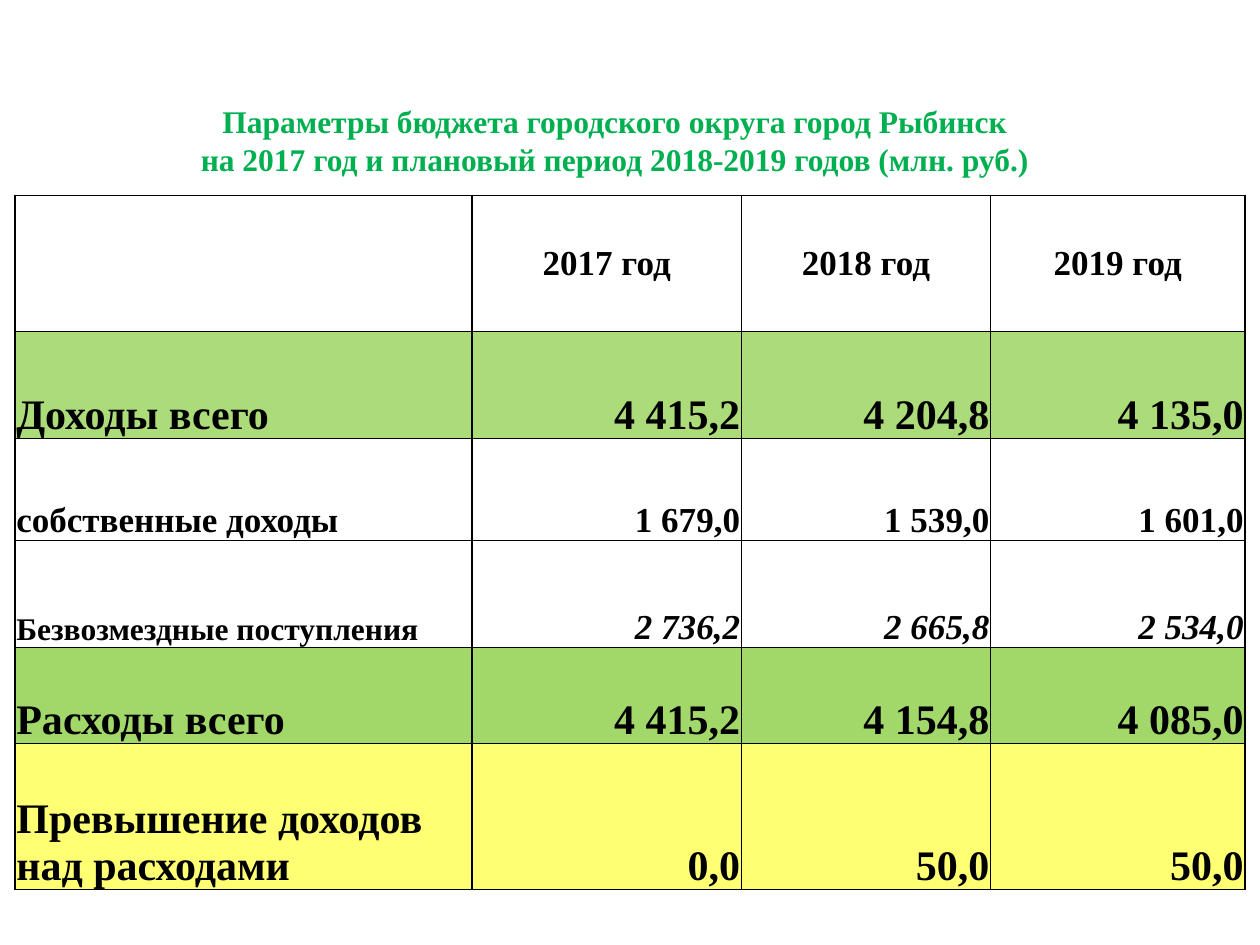
import pptx
import pptx.dml.color
import pptx.enum.text
import pptx.oxml
import pptx.oxml.ns
import pptx.util
from pptx.util import Inches

FONT = "Times New Roman"
ALIGN = pptx.enum.text.PP_ALIGN
ANCHOR = pptx.enum.text.MSO_ANCHOR
COLUMN_WIDTHS = [3.63, 2.14, 1.98, 2.02]
ROW_HEIGHTS = [1.08, 0.85, 0.81, 0.85, 0.76, 1.16]
YEARS = ["", "2017 год", "2018 год", "2019 год"]
# texts, label size, value size, italic values, fill, fill opacity in percent
BUDGET_ROWS = [
    (["Доходы всего", "4 415,2", "4 204,8", "4 135,0"], 24, 24, False, "92D050", 76),
    (["собственные доходы", "1 679,0", "1 539,0", "1 601,0"], 20, 20, False, None, 100),
    (["Безвозмездные поступления", "2 736,2", "2 665,8", "2 534,0"], 18, 20, True, None, 100),
    (["Расходы всего", "4 415,2", "4 154,8", "4 085,0"], 24, 24, False, "92D050", 85),
    (["Превышение доходов над расходами", "0,0", "50,0", "50,0"], 24, 24, False, "FFFF00", 55),
]


def rgb(value):
    return pptx.dml.color.RGBColor.from_string(value)


def set_values(target, values):
    for name, value in values.items():
        setattr(target, name, value)


def format_paragraph(paragraph, size, alignment, color="000000", italic=False):
    paragraph.alignment = alignment
    set_values(paragraph.font, {"name": FONT, "size": pptx.util.Pt(size),
                                "bold": True, "italic": italic})
    paragraph.font.color.rgb = rgb(color)


def fill_cell(cell, color, opacity):
    if color is None:
        cell.fill.background()
        return
    cell.fill.solid()
    cell.fill.fore_color.rgb = rgb(color)
    color_element = cell._tc.tcPr.find(".//" + pptx.oxml.ns.qn("a:srgbClr"))
    color_element.append(pptx.oxml.parse_xml(
        f'<a:alpha {pptx.oxml.ns.nsdecls("a")} val="{opacity * 1000}"/>'))


def add_borders(cell, color="000000", width=1):
    """Borders must stand before the fill in the cell properties."""
    for index, side in enumerate(["lnL", "lnR", "lnT", "lnB"]):
        cell._tc.get_or_add_tcPr().insert(index, pptx.oxml.parse_xml(
            f'<a:{side} {pptx.oxml.ns.nsdecls("a")} w="{pptx.util.Pt(width)}">'
            f'<a:solidFill><a:srgbClr val="{color}"/></a:solidFill></a:{side}>'))


def format_cell(cell, text, size, alignment, anchor, italic=False, color=None, opacity=100):
    cell.text = text
    set_values(cell, {"vertical_anchor": anchor, "margin_left": Inches(0.01),
                      "margin_right": Inches(0.01), "margin_top": Inches(0.01),
                      "margin_bottom": 0})
    format_paragraph(cell.text_frame.paragraphs[0], size, alignment, italic=italic)
    fill_cell(cell, color, opacity)
    add_borders(cell)


def place_title(slide, left, top, width, height):
    title = slide.shapes.title
    set_values(title, {"left": left, "top": top, "width": width, "height": height})
    frame = title.text_frame
    frame.text = ("Параметры бюджета городского округа город Рыбинск\n"
                  "на 2017 год и плановый период 2018-2019 годов (млн. руб.)")
    set_values(frame, {"word_wrap": True, "vertical_anchor": ANCHOR.TOP,
                       "auto_size": pptx.enum.text.MSO_AUTO_SIZE.NONE})
    for paragraph in frame.paragraphs:
        format_paragraph(paragraph, 18, ALIGN.CENTER, "00B050")


def add_budget_table(slide, left, top, width, height):
    table = slide.shapes.add_table(len(ROW_HEIGHTS), len(COLUMN_WIDTHS),
                                   left, top, width, height).table
    set_values(table, {"first_row": False, "horz_banding": False})
    for column, share in zip(table.columns, COLUMN_WIDTHS):
        column.width = int(width * share / sum(COLUMN_WIDTHS))
    for row, share in zip(table.rows, ROW_HEIGHTS):
        row.height = int(height * share / sum(ROW_HEIGHTS))

    for index, year in enumerate(YEARS):
        format_cell(table.cell(0, index), year, 20, ALIGN.CENTER, ANCHOR.MIDDLE)
    for row_index, budget_row in enumerate(BUDGET_ROWS, start=1):
        texts, label_size, value_size, italic, color, opacity = budget_row
        for index, text in enumerate(texts):
            is_label = index == 0
            format_cell(table.cell(row_index, index), text,
                        label_size if is_label else value_size,
                        ALIGN.LEFT if is_label else ALIGN.RIGHT, ANCHOR.BOTTOM,
                        italic and not is_label, color, opacity)


def main():
    presentation = pptx.Presentation()
    set_values(presentation, {"slide_width": Inches(10), "slide_height": Inches(7.5)})
    slide = presentation.slides.add_slide(presentation.slide_layouts.get_by_name("Title Only"))
    place_title(slide, Inches(0.43), Inches(0.76), Inches(8.9), Inches(0.71))
    add_budget_table(slide, Inches(0.12), Inches(1.55), Inches(9.76), Inches(5.51))
    presentation.save("out.pptx")


if __name__ == "__main__":
    main()
